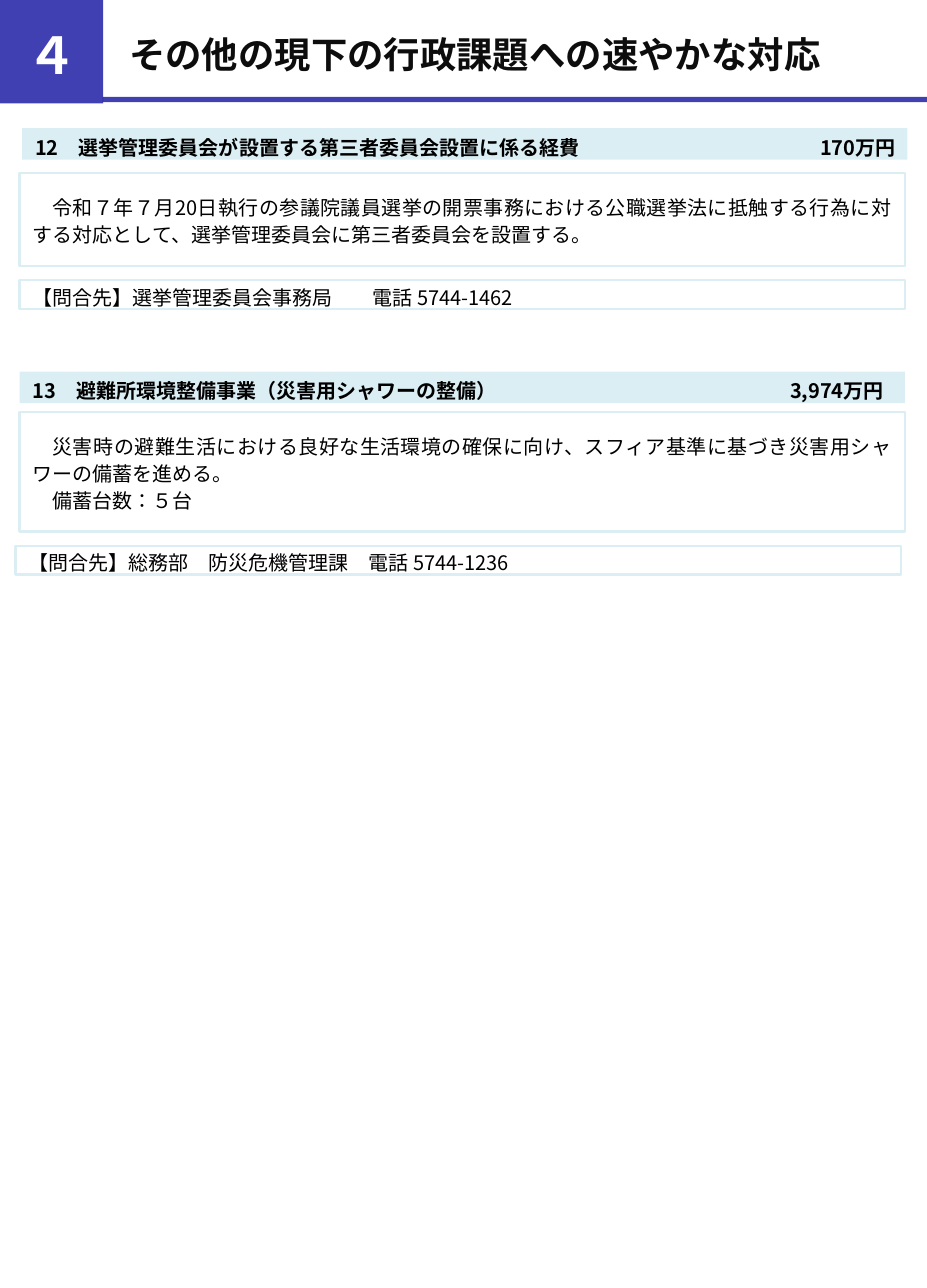
from dataclasses import dataclass

from lxml.etree import SubElement
from pptx import Presentation
from pptx.dml.color import RGBColor
from pptx.enum.lang import MSO_LANGUAGE_ID
from pptx.enum.shapes import MSO_SHAPE
from pptx.enum.text import MSO_ANCHOR, MSO_AUTO_SIZE, PP_ALIGN
from pptx.oxml.ns import qn
from pptx.util import Cm, Inches, Pt

WIDTH, HEIGHT = Cm(18), Cm(25)


@dataclass(frozen=True)
class Theme:
    """Colours, font and type sizes of the slide."""
    font: str = "Noto Sans CJK JP"
    accent: str = "000099"
    accent_alpha: int = 75
    pale: str = "DBEEF4"
    paper: str = "FFFFFF"
    ink: str = "000000"
    heading: str = "0D0D0D"
    badge_size: int = 28
    title_size: int = 20
    text_size: int = 11
    leading: int = 15
    outline: float = 1.25


THEME = Theme()


def place(left, top, width, height):
    """Turn percentages of the slide into a left, top, width, height box."""
    return (int(WIDTH * left / 100), int(HEIGHT * top / 100),
            int(WIDTH * width / 100), int(HEIGHT * height / 100))


def add_panel(slide, box, fill, outline=None, alpha=None):
    """Add a flat rectangle with an optional outline and opacity."""
    panel = slide.shapes.add_shape(MSO_SHAPE.RECTANGLE, *place(*box))
    panel.shadow.inherit = False
    panel.fill.solid()
    panel.fill.fore_color.rgb = RGBColor.from_string(fill)
    if alpha:
        colour = panel.fill._xPr.find(".//" + qn("a:srgbClr"))
        SubElement(colour, qn("a:alpha"), val=str(alpha * 1000))
    if outline:
        panel.line.color.rgb = RGBColor.from_string(outline)
        panel.line.width = Pt(THEME.outline)
    else:
        panel.line.fill.background()
    return panel


def set_frame(shape, insets):
    """Prepare a middle-anchored, wrapping text frame."""
    frame = shape.text_frame
    frame.word_wrap = True
    frame.auto_size = MSO_AUTO_SIZE.NONE
    frame.vertical_anchor = MSO_ANCHOR.MIDDLE
    (frame.margin_left, frame.margin_top,
     frame.margin_right, frame.margin_bottom) = map(Inches, insets)
    return frame


def add_text(paragraph, text, size, colour, bold=False, align=PP_ALIGN.LEFT):
    """Add one Japanese run in the theme font."""
    paragraph.alignment = align
    run = paragraph.add_run()
    run.text = text
    run.font.language_id = MSO_LANGUAGE_ID.JAPANESE
    run.font.name = THEME.font
    run.font.size = Pt(size)
    run.font.bold = bold
    run.font.color.rgb = RGBColor.from_string(colour)
    SubElement(run.font._element, qn("a:ea"), typeface=THEME.font)


def add_tab(paragraph, position, align):
    """Set a tab stop, measured in inches from the text edge."""
    stops = SubElement(paragraph._p.get_or_add_pPr(), qn("a:tabLst"))
    SubElement(stops, qn("a:tab"), pos=str(Inches(position)), algn=align)


def add_header(slide, number, heading):
    """Add the numbered badge, the rule and the slide title."""
    badge = add_panel(slide, (0, 0, 11.14, 8.03), THEME.accent,
                      alpha=THEME.accent_alpha)
    frame = set_frame(badge, (0.08, 0.08, 0.08, 0.04))
    add_text(frame.paragraphs[0], number, THEME.badge_size, THEME.paper,
             True, PP_ALIGN.CENTER)
    add_panel(slide, (11.1, 7.52, 88.9, 0.41), THEME.accent,
              alpha=THEME.accent_alpha)
    title = slide.shapes.title
    title.left, title.top, title.width, title.height = place(
        11.1, 0, 88.9, 7.93)
    frame = set_frame(title, (0.2, 0.08, 0.1, 0.04))
    add_text(frame.paragraphs[0], heading, THEME.title_size, THEME.heading,
             True)


def add_budget_bar(slide, box, item, amount, amount_edge):
    """Add a pale bar with an item and its right-aligned amount."""
    bar = add_panel(slide, box, THEME.pale)
    line = set_frame(bar, (0.1, 0.05, 0, 0)).paragraphs[0]
    add_tab(line, amount_edge, "r")
    add_text(line, f"{item}\t{amount}", THEME.text_size, THEME.ink, True)


def add_description(slide, box, sentences):
    """Add an outlined panel of justified paragraphs with indented starts."""
    panel = add_panel(slide, box, THEME.paper, THEME.pale)
    frame = set_frame(panel, (0.1, 0.04, 0.1, 0.04))
    for index, sentence in enumerate(sentences):
        line = frame.add_paragraph() if index else frame.paragraphs[0]
        line.line_spacing = Pt(THEME.leading)
        line._p.get_or_add_pPr().set("indent", str(Pt(THEME.text_size)))
        add_text(line, sentence, THEME.text_size, THEME.ink,
                 align=PP_ALIGN.JUSTIFY)


def add_contact(slide, box, office, phone):
    """Add an outlined strip with the office and its telephone number."""
    strip = add_panel(slide, box, THEME.paper, THEME.pale)
    line = set_frame(strip, (0.1, 0.04, 0.1, 0)).paragraphs[0]
    add_tab(line, 2.6, "l")
    add_text(line, f"【問合先】{office}\t電話 {phone}", THEME.text_size,
             THEME.ink)


def main():
    """Build the slide and save it."""
    deck = Presentation()
    deck.slide_width, deck.slide_height = WIDTH, HEIGHT
    deck.element.sldSz.attrib.pop("type", None)
    slide = deck.slides.add_slide(deck.slide_layouts[5])
    add_header(slide, "４", "その他の現下の行政課題への速やかな対応")

    add_budget_bar(slide, (2.4, 9.96, 95.49, 2.44),
                   "12　選挙管理委員会が設置する第三者委員会設置に係る経費",
                   "170万円", 6.58)
    add_description(slide, (2.12, 13.41, 95.49, 7.22), [
        "令和７年７月20日執行の参議院議員選挙の開票事務における公職選挙法に"
        "抵触する行為に対する対応として、選挙管理委員会に第三者委員会を設置する。"])
    add_contact(slide, (2.12, 21.75, 95.49, 2.24),
                "選挙管理委員会事務局", "5744-1462")

    add_budget_bar(slide, (2.12, 28.86, 95.49, 2.44),
                   "13　避難所環境整備事業（災害用シャワーの整備）",
                   "3,974万円", 6.51)
    add_description(slide, (2.12, 32.01, 95.49, 9.25), [
        "災害時の避難生活における良好な生活環境の確保に向け、"
        "スフィア基準に基づき災害用シャワーの備蓄を進める。",
        "備蓄台数：５台"])
    add_contact(slide, (1.69, 42.38, 95.49, 2.24),
                "総務部　防災危機管理課", "5744-1236")
    deck.save("out.pptx")


if __name__ == "__main__":
    main()
